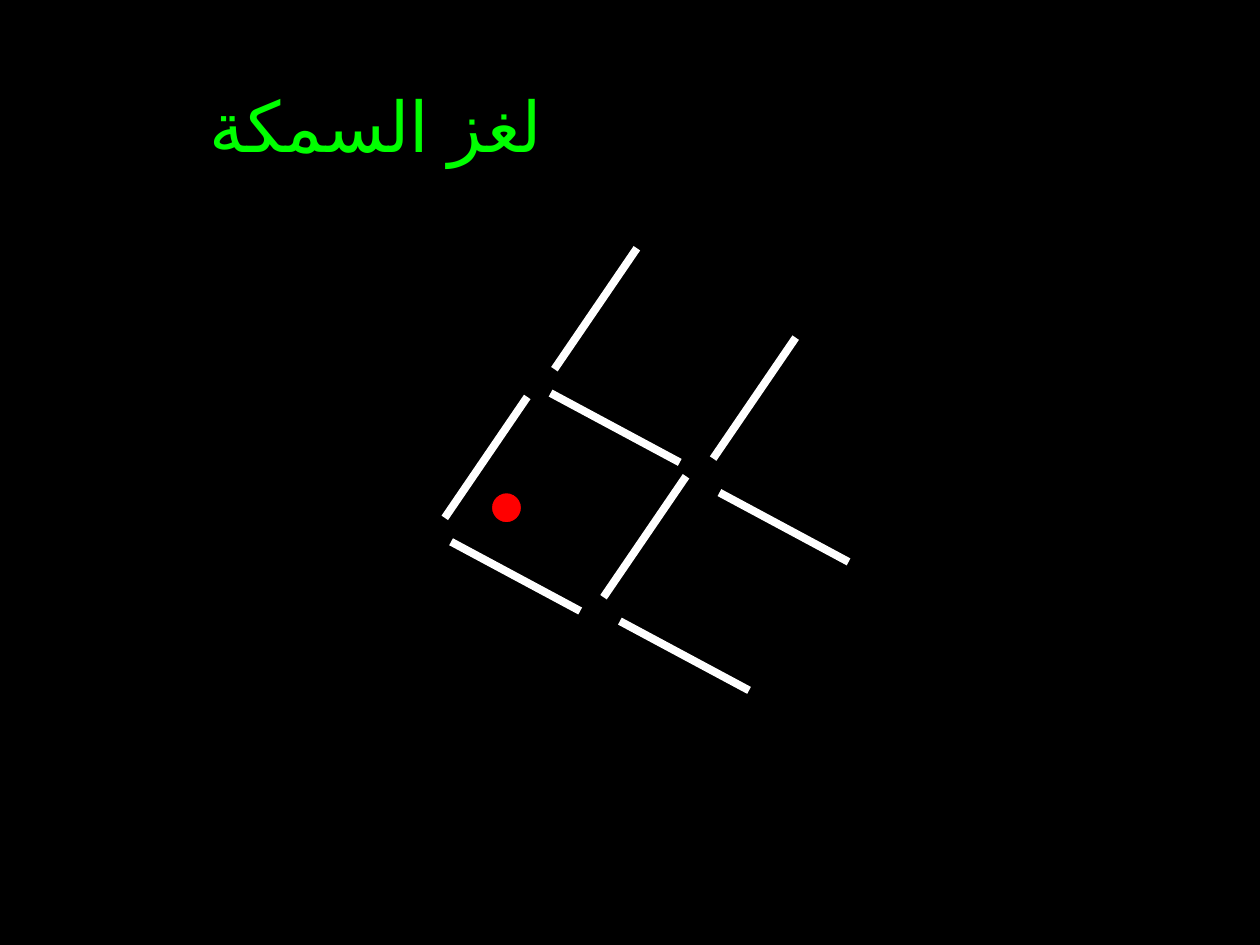
from dataclasses import dataclass

from lxml.etree import SubElement
from pptx import Presentation
from pptx.dml.color import RGBColor as Rgb
from pptx.enum.lang import MSO_LANGUAGE_ID as Language
from pptx.enum.shapes import MSO_CONNECTOR as Connector, MSO_SHAPE as Shape
from pptx.enum.text import PP_ALIGN as Align
from pptx.oxml.ns import qn
from pptx.util import Inches, Pt


@dataclass(frozen=True)
class Theme:
    background: Rgb = Rgb(0, 0, 0)
    title: Rgb = Rgb(0, 255, 0)
    stick: Rgb = Rgb(255, 255, 255)
    eye: Rgb = Rgb(255, 0, 0)
    font: str = "Arial"
    title_size: Pt = Pt(40)
    stick_width: Pt = Pt(4.5)
    eye_outline: Pt = Pt(0.75)


THEME = Theme()
WIDTH, HEIGHT = Inches(10), Inches(7.5)

BODY_STEP = (10.25, 7.33)
FIN_STEP = (6.55, -12.8)
BODY_STARTS = [(43.7, 41.6), (35.8, 57.33), (57.1, 52.13), (49.2, 65.73)]
FIN_STARTS = [(44, 39.07), (35.3, 54.8), (56.6, 48.53), (47.9, 63.2)]


def across(percent):
    return round(WIDTH * percent / 100)


def down(percent):
    return round(HEIGHT * percent / 100)


def add_title(slide, text, left, top, width, height):
    title = slide.shapes.add_textbox(across(left), down(top), across(width), down(height))
    frame = title.text_frame
    frame.word_wrap = True
    frame.text = text
    line = frame.paragraphs[0]
    line.alignment = Align.CENTER
    line.line_spacing = 0.9
    line._p.get_or_add_pPr().set("rtl", "1")
    run = line.runs[0]
    run.font.name = THEME.font
    run.font.size = THEME.title_size
    run.font.color.rgb = THEME.title
    run.font.language_id = Language.ARABIC
    SubElement(run._r.get_or_add_rPr(), qn("a:cs"), typeface=THEME.font)


def add_stick(slide, start, step):
    x, y = start
    dx, dy = step
    stick = slide.shapes.add_connector(
        Connector.STRAIGHT, across(x), down(y), across(x + dx), down(y + dy)
    )
    stick.line.color.rgb = THEME.stick
    stick.line.width = THEME.stick_width
    SubElement(stick._element.spPr, qn("a:effectLst"))


def add_eye(slide, left, top, diameter):
    size = across(diameter)
    eye = slide.shapes.add_shape(Shape.OVAL, across(left), down(top), size, size)
    eye.shadow.inherit = False
    eye.fill.solid()
    eye.fill.fore_color.rgb = THEME.eye
    eye.line.color.rgb = THEME.background
    eye.line.width = THEME.eye_outline


def main():
    deck = Presentation()
    deck.slide_width, deck.slide_height = WIDTH, HEIGHT
    slide = deck.slides.add_slide(deck.slide_layouts[6])
    slide.background.fill.solid()
    slide.background.fill.fore_color.rgb = THEME.background

    add_title(slide, "لغز السمكة", 9, 9.07, 41.7, 10.53)
    for starts, step in ((BODY_STARTS, BODY_STEP), (FIN_STARTS, FIN_STEP)):
        for start in starts:
            add_stick(slide, start, step)
    add_eye(slide, 39, 52.13, 2.4)

    deck.save("out.pptx")


if __name__ == "__main__":
    main()
